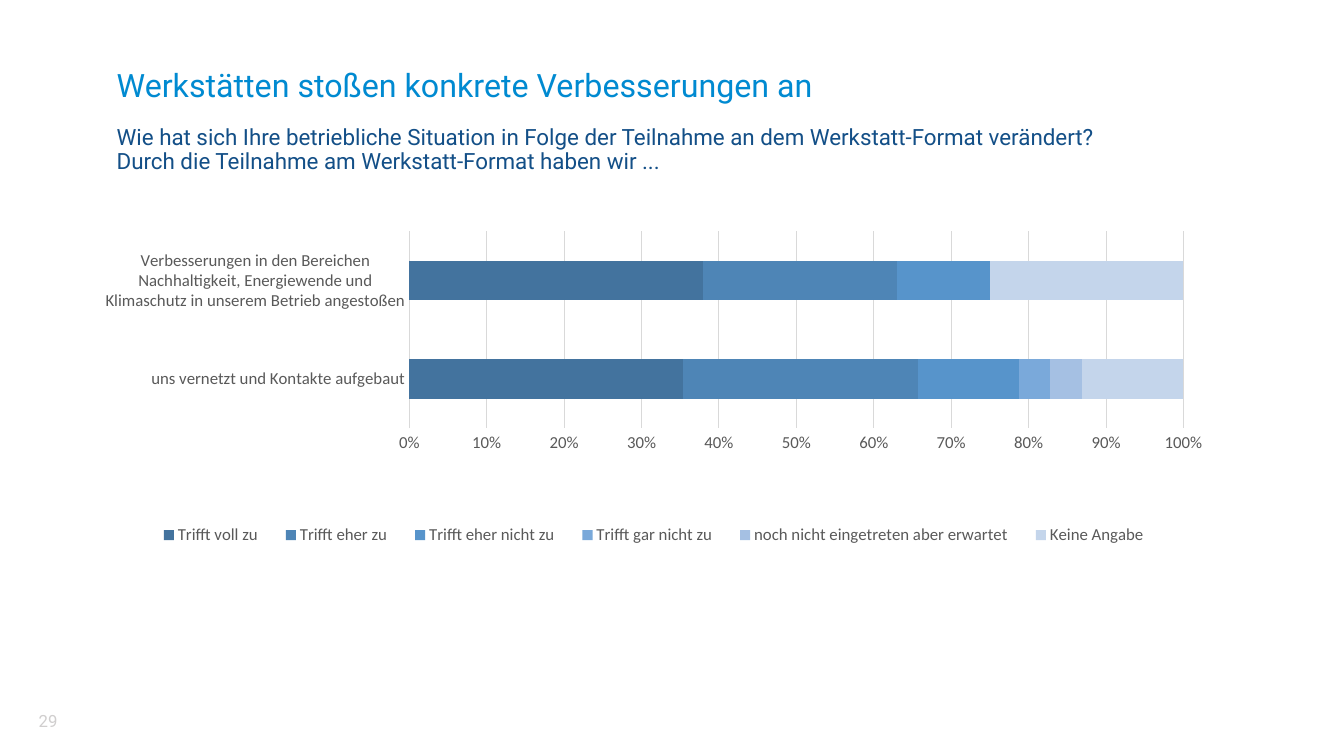
from dataclasses import dataclass

from lxml import etree
from pptx import Presentation
from pptx.chart.data import CategoryChartData
from pptx.dml.color import RGBColor
from pptx.enum import chart as ch, text
from pptx.oxml import ns
from pptx.util import Cm, Pt


@dataclass(frozen=True)
class Theme:
    heading_font: str = "Roboto"
    chart_font: str = "Calibri"
    title: str = "008AD1"
    question: str = "134F87"
    number: str = "D0CECE"
    label: str = "595959"
    grid: str = "D9D9D9"
    background: str = "FFFFFF"
    title_pt: float = 23
    question_pt: float = 16
    small_pt: float = 12
    line_pt: float = 0.75


@dataclass(frozen=True)
class Box:
    left: float
    top: float
    width: float
    height: float

    def cm(self) -> tuple:
        return Cm(self.left), Cm(self.top), Cm(self.width), Cm(self.height)


@dataclass(frozen=True)
class Answer:
    name: str
    values: tuple
    color: str


THEME = Theme()
CATEGORIES = (
    "uns vernetzt und Kontakte aufgebaut",
    "Verbesserungen in den Bereichen\nNachhaltigkeit, Energiewende und\n"
    "Klimaschutz in unserem Betrieb angestoßen",
)
ANSWERS = (
    Answer("Trifft voll zu", (35, 38), "43739E"),
    Answer("Trifft eher zu", (30, 25), "4E85B6"),
    Answer("Trifft eher nicht zu", (13, 12), "5794CB"),
    Answer("Trifft gar nicht zu", (4, 0), "7AA9DA"),
    Answer("noch nicht eingetreten aber erwartet", (4, 0), "A5C0E3"),
    Answer("Keine Angabe", (13, 25), "C4D5EB"),
)


def rgb(color: str) -> RGBColor:
    return RGBColor.from_string(color)


def style_font(font, name: str, size: float, color: str) -> None:
    font.name = name
    font.size = Pt(size)
    font.bold = False
    font.color.rgb = rgb(color)


def fill_text(sp, box: Box, content: str, size: float, color: str, align) -> None:
    """Place a shape and give it one formatted, unbulleted paragraph."""
    sp.left, sp.top, sp.width, sp.height = box.cm()
    tf = sp.text_frame
    tf.text = content
    tf.word_wrap = True
    tf.auto_size = text.MSO_AUTO_SIZE.NONE
    tf.vertical_anchor = text.MSO_ANCHOR.MIDDLE
    p = tf.paragraphs[0]
    p.alignment = align
    p.space_before = Pt(0)
    for r in p.runs:
        style_font(r.font, THEME.heading_font, size, color)


def fill_heading(sp, box: Box, content: str, size: float, color: str) -> None:
    fill_text(sp, box, content, size, color, text.PP_ALIGN.LEFT)
    tf = sp.text_frame
    tf.margin_left = tf.margin_right = Cm(0.3)
    tf.margin_top = tf.margin_bottom = Cm(0.61)
    p = tf.paragraphs[0]
    p.line_spacing = 0.9
    pPr = p._p.get_or_add_pPr()
    pPr.set("marL", "0")
    pPr.set("indent", "0")
    etree.SubElement(pPr, ns.qn("a:buNone"))


def set_layout(parent, index: int, area: Box, inner: bool = False) -> None:
    """Fix a chart part's place, given in fractions of the chart."""
    for old in parent.findall(ns.qn("c:layout")):
        parent.remove(old)
    layout = etree.Element(ns.qn("c:layout"))
    manual = etree.SubElement(layout, ns.qn("c:manualLayout"))
    settings = [("layoutTarget", "inner")] if inner else []
    settings += [("xMode", "edge"), ("yMode", "edge"), ("x", area.left),
                 ("y", area.top), ("w", area.width), ("h", area.height)]
    for tag, value in settings:
        etree.SubElement(manual, ns.qn(f"c:{tag}")).set("val", str(value))
    parent.insert(index, layout)


def style_axis(axis) -> None:
    axis.major_tick_mark = axis.minor_tick_mark = ch.XL_TICK_MARK.NONE
    style_font(axis.tick_labels.font, THEME.chart_font, THEME.small_pt, THEME.label)


def style_line(line) -> None:
    line.color.rgb = rgb(THEME.grid)
    line.width = Pt(THEME.line_pt)


def add_answer_chart(slide, box: Box) -> None:
    data = CategoryChartData(number_format="0")
    data.categories = CATEGORIES
    for answer in ANSWERS:
        data.add_series(answer.name, answer.values)
    chart = slide.shapes.add_chart(ch.XL_CHART_TYPE.BAR_STACKED_100, *box.cm(), data).chart
    chart.has_title = False
    style_font(chart.font, THEME.chart_font, THEME.small_pt, THEME.label)

    plot = chart.plots[0]
    plot.gap_width = 150
    plot.overlap = 100
    plot.vary_by_categories = False
    for series, answer in zip(plot.series, ANSWERS):
        series.format.fill.solid()
        series.format.fill.fore_color.rgb = rgb(answer.color)

    style_axis(chart.category_axis)
    chart.category_axis.has_major_gridlines = False
    style_line(chart.category_axis.format.line)
    value_axis = chart.value_axis
    style_axis(value_axis)
    value_axis.has_major_gridlines = True
    style_line(value_axis.major_gridlines.format.line)
    value_axis.format.line.fill.background()
    value_axis.tick_labels.number_format = "0%"
    value_axis.tick_labels.number_format_is_linked = False

    chart.has_legend = True
    legend = chart.legend
    legend.position = ch.XL_LEGEND_POSITION.BOTTOM
    legend.include_in_layout = False
    style_font(legend.font, THEME.chart_font, THEME.small_pt, THEME.label)
    set_layout(chart._chartSpace.chart.plotArea, 0, Box(0.31, 0.107, 0.665, 0.42), inner=True)
    set_layout(legend._element, 1, Box(0.08, 0.72, 0.88, 0.07))


def main() -> None:
    prs = Presentation()
    prs.slide_width, prs.slide_height = Cm(33.87), Cm(19.05)
    slide = prs.slides.add_slide(prs.slide_layouts[1])
    slide.background.fill.solid()
    slide.background.fill.fore_color.rgb = rgb(THEME.background)

    fill_heading(slide.shapes.title, Box(2.64, 1.42, 19.96, 1.57),
                 "Werkstätten stoßen konkrete Verbesserungen an",
                 THEME.title_pt, THEME.title)
    fill_heading(slide.placeholders[1], Box(2.64, 3, 30.61, 1.57),
                 "Wie hat sich Ihre betriebliche Situation in Folge der Teilnahme "
                 "an dem Werkstatt-Format verändert?\v"
                 "Durch die Teilnahme am Werkstatt-Format haben wir ...",
                 THEME.question_pt, THEME.question)
    add_answer_chart(slide, Box(1.22, 4.57, 29.34, 11.81))
    number_box = Box(0.43, 17.65, 1.57, 1.02)
    fill_text(slide.shapes.add_textbox(*number_box.cm()), number_box, "29",
              THEME.small_pt, THEME.number, text.PP_ALIGN.CENTER)
    prs.save("out.pptx")


if __name__ == "__main__":
    main()
